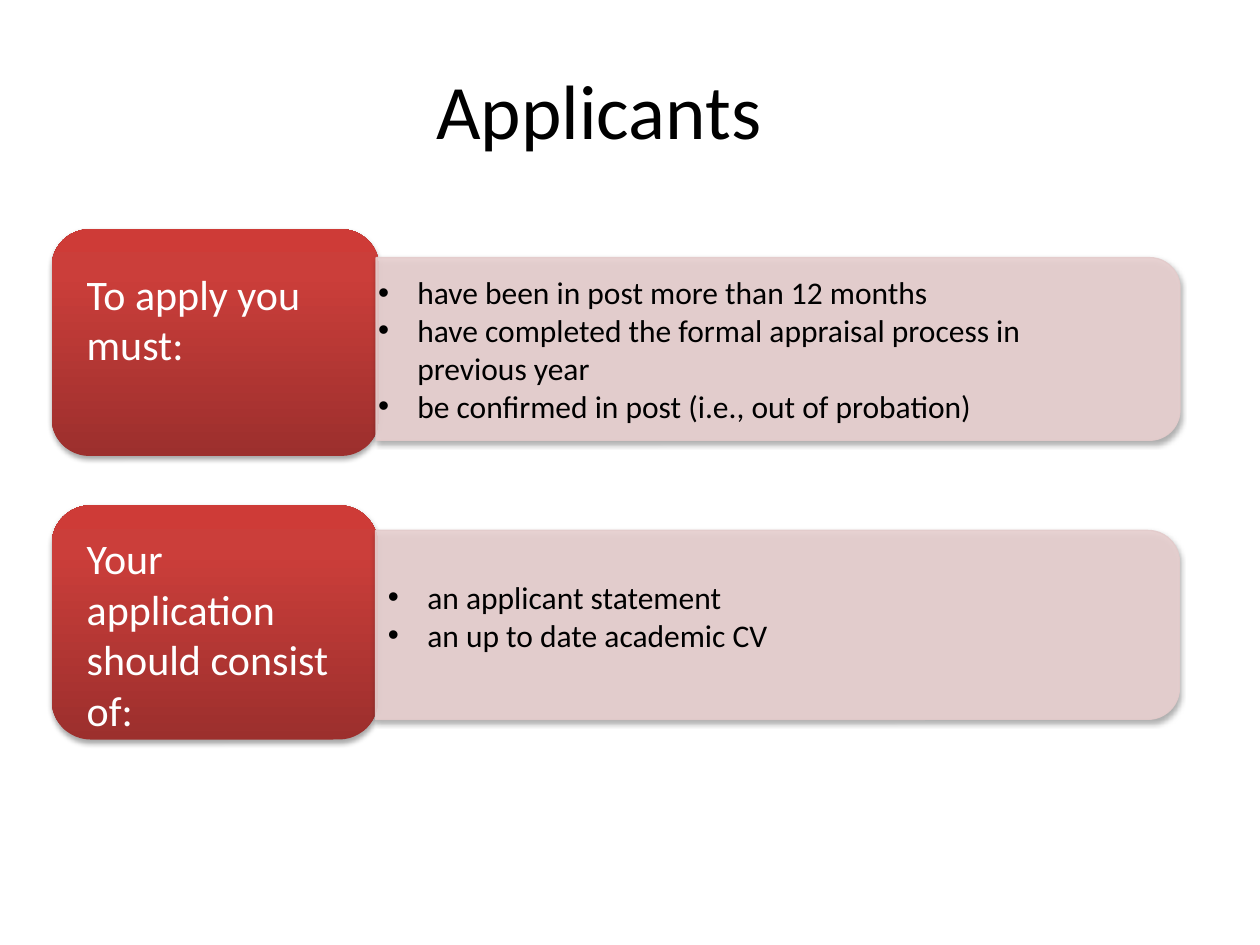
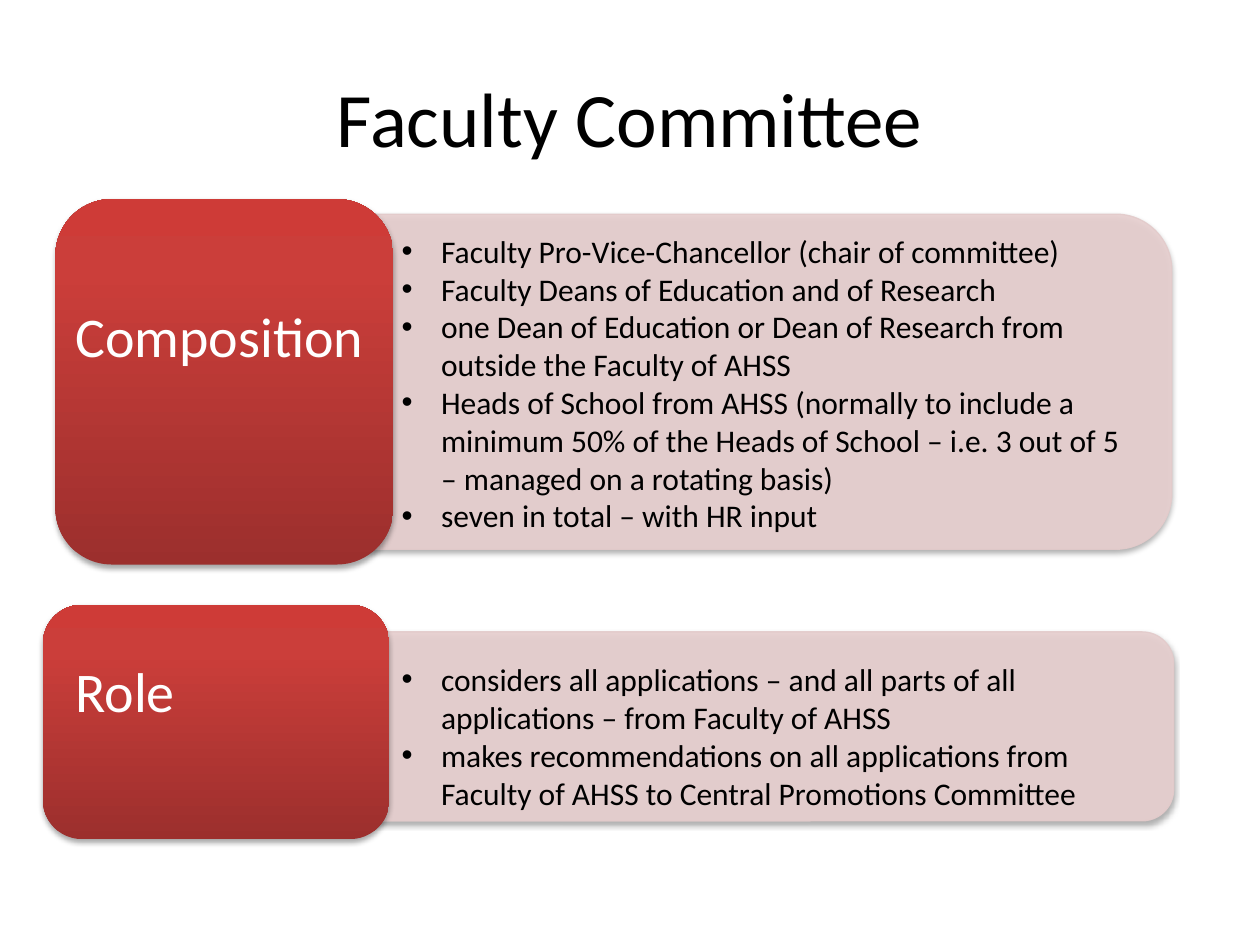
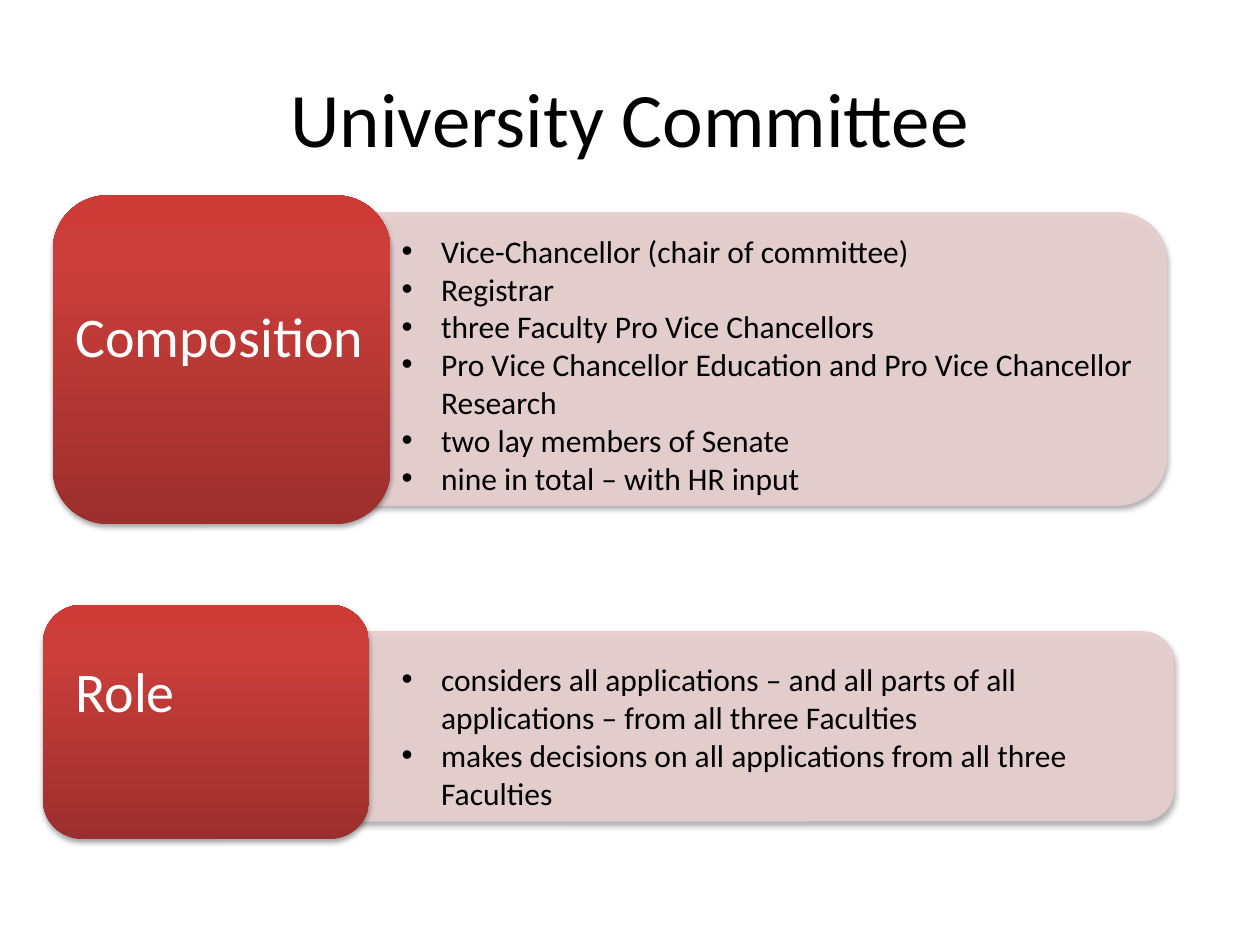
import pptx
import pptx.util
import pptx.oxml
import pptx.oxml.ns
import pptx.dml.color
import pptx.enum.shapes
import pptx.enum.text

Pt = pptx.util.Pt
SHAPE = pptx.enum.shapes.MSO_SHAPE
ANCHOR = pptx.enum.text.MSO_ANCHOR
ALIGN = pptx.enum.text.PP_ALIGN

# Shared look
FONT = "Calibri"
BLACK, WHITE = "000000", "FFFFFF"
PANEL, EDGE = "E8D0D0", "E3CBCB"
REDS = [(0, "9C2F2D"), (80, "CB3E3A"), (100, "CE3B37")]
INDENT = 22.5
WIDE, TIGHT = (7.2, 3.6), (5, 2.5)

# Content; every box is left, top, width, height in points
ROLE = dict(label="Role", tag=(36, 371.5, 175, 46),
            panel=(173.2, 361.1, 497.5, 108), list=(222.5, 373.7, 432, 94.3))
COMP = dict(label="Composition", tag=(36, 168.5, 187.2, 46))

SLIDES = [
    dict(title="Applicants", head=(29.5, 31.7, 625.7, 60.5),
         size=24, front="panel", anchor=ANCHOR.MIDDLE, inset=TIGHT, rows=[
        dict(label="To apply you must:", card=(29.5, 131, 187.2, 129.6),
             tag=(42.5, 149.8, 170.6, 65.5), panel=(214.9, 147.2, 459.4, 104.4),
             list=(211, 162, 426.2, 74.9), points=[
                 "have been in post more than 12 months",
                 "have completed the formal appraisal process in previous year",
                 "be confirmed in post (i.e., out of probation)"]),
        dict(label="Your application should consist of:",
             card=(29.5, 288.7, 186.5, 133.9), tag=(42.5, 301, 168.5, 123.8),
             panel=(214.6, 303.1, 459.4, 108), list=(216.7, 303.1, 430.6, 97.2),
             points=["an applicant statement", "an up to date academic CV"]),
    ]),
    dict(title="Faculty Committee", head=(36, 21.6, 648, 90),
         size=32, front="card", anchor=ANCHOR.TOP, inset=WIDE, rows=[
        dict(COMP, card=(31.7, 113.8, 193, 208.8), panel=(208.8, 122.4, 460.8, 191.5),
             list=(222.5, 128.9, 432, 181.4), points=[
                 "Faculty Pro-Vice-Chancellor (chair of committee)",
                 "Faculty Deans of Education and of Research",
                 "one Dean of Education or Dean of Research from outside the Faculty of AHSS",
                 "Heads of School from AHSS (normally to include a minimum 50% of the "
                 "Heads of School – i.e. 3 out of 5 – managed on a rotating basis)",
                 "seven in total – with HR input"]),
        dict(ROLE, card=(24.5, 345.6, 198, 133.9), points=[
            "considers all applications – and all parts of all applications – "
            "from Faculty of AHSS",
            "makes recommendations on all applications from Faculty of AHSS "
            "to Central Promotions Committee"]),
    ]),
    dict(title="University Committee", head=(36, 21.6, 648, 90),
         size=32, front="card", anchor=ANCHOR.TOP, inset=WIDE, rows=[
        dict(COMP, card=(30.2, 111.6, 193, 187.9), panel=(205.9, 121.7, 460.8, 167),
             list=(222.5, 128.9, 432, 159.8), points=[
                 "Vice-Chancellor (chair of committee)",
                 "Registrar",
                 "three Faculty Pro Vice Chancellors",
                 "Pro Vice Chancellor Education and Pro Vice Chancellor Research",
                 "two lay members of Senate",
                 "nine in total – with HR input"]),
        dict(ROLE, card=(24.5, 345.6, 186.5, 133.9), points=[
            "considers all applications – and all parts of all applications – "
            "from all three Faculties",
            "makes decisions on all applications from all three Faculties"]),
    ]),
]


def color(text):
    return pptx.dml.color.RGBColor.from_string(text)


def node(tag, attrs="", inner=""):
    space = pptx.oxml.ns.nsdecls("a")
    return pptx.oxml.parse_xml(f"<a:{tag} {space} {attrs}>{inner}</a:{tag}>")


def shade(shape):
    """Give the shape a soft shadow that falls straight down."""
    shape.shadow.inherit = False
    effects = shape._element.spPr.find(pptx.oxml.ns.qn("a:effectLst"))
    effects.append(node(
        "outerShdw",
        f'blurRad="{Pt(3.1)}" dist="{Pt(1.8)}" dir="5400000" rotWithShape="0"',
        f'<a:srgbClr val="{BLACK}"><a:alpha val="35000"/></a:srgbClr>'))


def style(para, size, hue):
    para.font.name = FONT
    para.font.size = Pt(size)
    para.font.color.rgb = color(hue)


def add_card(slide, box):
    card = slide.shapes.add_shape(SHAPE.ROUNDED_RECTANGLE, *map(Pt, box))
    card.line.fill.background()
    stops = "".join(f'<a:gs pos="{pos * 1000}"><a:srgbClr val="{hue}"/></a:gs>'
                    for pos, hue in REDS)
    grad = node("gradFill", 'rotWithShape="1"',
                f'<a:gsLst>{stops}</a:gsLst><a:lin ang="16200000" scaled="0"/>')
    card._element.spPr.prstGeom.addnext(grad)
    shade(card)


def add_panel(slide, box):
    """Draw the panel upright, then turn it so its round end is on the right."""
    left, top, width, height = box
    shift = (width - height) / 2
    panel = slide.shapes.add_shape(
        SHAPE.ROUND_2_SAME_RECTANGLE,
        *map(Pt, (left + shift, top - shift, height, width)))
    panel.rotation = 90
    panel.fill.solid()
    panel.fill.fore_color.rgb = color(PANEL)
    panel.line.color.rgb = color(EDGE)
    panel.line.width = Pt(0.75)
    for tint in panel._element.spPr.iter(pptx.oxml.ns.qn("a:srgbClr")):
        tint.append(node("alpha", 'val="90000"'))
    shade(panel)


def add_text(slide, box, lines, size, hue, anchor=ANCHOR.TOP, inset=WIDE, bullet=False):
    frame = slide.shapes.add_textbox(*map(Pt, box)).text_frame
    frame.word_wrap = True
    frame.vertical_anchor = anchor
    frame.margin_left = frame.margin_right = Pt(inset[0])
    frame.margin_top = frame.margin_bottom = Pt(inset[1])
    frame.text = "\n".join(lines)
    for para in frame.paragraphs:
        style(para, size, hue)
        if bullet:
            props = para._p.get_or_add_pPr()
            props.set("marL", str(Pt(INDENT)))
            props.set("indent", str(-Pt(INDENT)))
            mark = node("buFont", 'typeface="Arial"')
            props.insert(0, mark)
            mark.addnext(node("buChar", 'char="•"'))


def add_title(slide, text, box):
    title = slide.shapes.title
    title.left, title.top, title.width, title.height = map(Pt, box)
    title.text_frame.text = text
    title.text_frame.vertical_anchor = ANCHOR.MIDDLE
    para = title.text_frame.paragraphs[0]
    para.alignment = ALIGN.CENTER
    style(para, 44, BLACK)


def add_row(slide, row, page):
    parts = [("card", add_card), ("panel", add_panel)]
    # The part named as front is drawn last
    for name, draw in sorted(parts, key=lambda part: part[0] == page["front"]):
        draw(slide, row[name])
    add_text(slide, row["tag"], [row["label"]], page["size"], WHITE)
    add_text(slide, row["list"], row["points"], 18, BLACK,
             page["anchor"], page["inset"], bullet=True)


def main():
    deck = pptx.Presentation()
    deck.slide_width, deck.slide_height = Pt(720), Pt(540)
    for page in SLIDES:
        slide = deck.slides.add_slide(deck.slide_layouts[5])
        add_title(slide, page["title"], page["head"])
        for row in page["rows"]:
            add_row(slide, row, page)
    deck.save("out.pptx")


if __name__ == "__main__":
    main()
